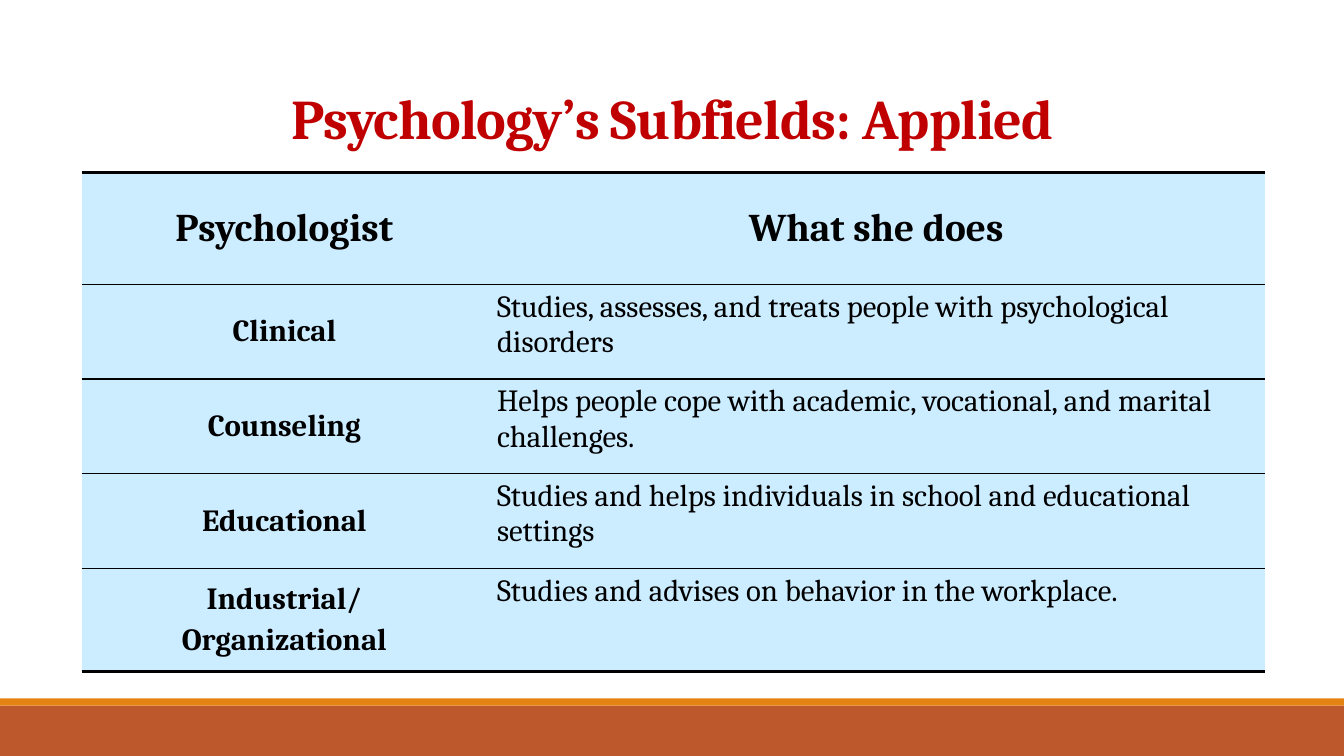
from lxml.etree import SubElement
from pptx import Presentation
from pptx.dml.color import RGBColor
from pptx.enum.shapes import MSO_SHAPE as Shape
from pptx.enum.text import MSO_ANCHOR as Anchor, PP_ALIGN as Align
from pptx.oxml.ns import qn
from pptx.util import Pt

PX = 9144  # 100 px to the inch
WIDE, HIGH = 1333, 750
FONT = "Cambria"
BLACK = RGBColor(0, 0, 0)
RED = RGBColor(0xC0, 0, 0)
SKY = RGBColor(0xCC, 0xEC, 0xFF)
RUST = RGBColor(0xBD, 0x58, 0x2C)
AMBER = RGBColor(0xE4, 0x83, 0x12)

COLS = [402, 772]
ROWS = [
    (111, "Psychologist", "What she does"),
    (94, "Clinical",
     "Studies, assesses, and treats people with psychological disorders"),
    (94, "Counseling",
     "Helps people cope with academic, vocational, and marital challenges."),
    (94, "Educational",
     "Studies and helps individuals in school and educational settings"),
    (102, "Industrial/\nOrganizational",
     "Studies and advises on behavior in the workplace."),
]


def px(*vals):
    return [round(val * PX) for val in vals]


def write(frame, text, size=22, color=BLACK, bold=False, align=Align.LEFT,
          anchor=Anchor.TOP, line=None, before=None, track=None):
    """Fill a frame; before is in percent of a line, track in 1/100 pt."""
    frame.word_wrap = True
    frame.vertical_anchor = anchor
    for i, part in enumerate(text.split("\n")):
        para = frame.add_paragraph() if i else frame.paragraphs[0]
        para.alignment = align
        if line:
            para.line_spacing = line
        if before:
            gap = SubElement(para._p.get_or_add_pPr(), qn("a:spcBef"))
            SubElement(gap, qn("a:spcPct"), val=str(before * 1000))
        run = para.add_run()
        run.text = part
        font = run.font
        font.name, font.size, font.bold = FONT, Pt(size), bold
        font.color.rgb = color
        if track:
            run._r.get_or_add_rPr().set("spc", str(track))


def edge(cell, top, bottom):
    """Rule a cell above and below, widths in points, with open sides."""
    props = cell._tc.get_or_add_tcPr()
    for side, width in (("L", 0), ("R", 0), ("T", top), ("B", bottom)):
        rule = SubElement(props, qn(f"a:ln{side}"), w=str(Pt(width)))
        if width:
            fill = SubElement(rule, qn("a:solidFill"))
            SubElement(fill, qn("a:srgbClr"), val=str(BLACK))
        else:
            SubElement(rule, qn("a:noFill"))


def footer(slide, x, y, w, h):
    trim = 7
    for top, tall, color in ((y + trim, h - trim, RUST), (y, trim, AMBER)):
        bar = slide.shapes.add_shape(Shape.RECTANGLE, *px(x, top, w, tall))
        bar.shadow.inherit = False
        bar.fill.solid()
        bar.fill.fore_color.rgb = color
        bar.line.fill.background()


def heading(slide, x, y, w, h):
    title = slide.shapes.title
    title.left, title.top, title.width, title.height = px(x, y, w, h)
    write(title.text_frame, "Psychology’s Subfields: Applied", size=40,
          color=RED, bold=True, align=Align.CENTER, anchor=Anchor.BOTTOM,
          line=0.85, track=-50)


def grid(slide, x, y):
    last = len(ROWS) - 1
    box = px(x, y, sum(COLS), sum(row[0] for row in ROWS))
    table = slide.shapes.add_table(len(ROWS), len(COLS), *box).table
    table.first_row = table.horz_banding = False
    for col, wide in zip(table.columns, px(*COLS)):
        col.width = wide
    for r, (tall, *texts) in enumerate(ROWS):
        table.rows[r].height = px(tall)[0]
        for c, text in enumerate(texts):
            cell = table.cell(r, c)
            edge(cell, 1 if r else 2.25, 2.25 if r == last else 1)
            cell.fill.solid()
            cell.fill.fore_color.rgb = SKY
            label = r == 0 or c == 0
            look = dict(bold=True, align=Align.CENTER, before=20) if label else {}
            write(cell.text_frame, text, size=22 if r else 28, **look)
            cell.vertical_anchor = Anchor.MIDDLE if label else Anchor.TOP


def main():
    deck = Presentation()
    deck.slide_width, deck.slide_height = px(WIDE, HIGH)
    slide = deck.slides.add_slide(deck.slide_layouts[5])
    footer(slide, 0, 693, WIDE, 57)
    heading(slide, 67, 30, 1200, 125)
    grid(slide, 81, 171)
    deck.save("out.pptx")


if __name__ == "__main__":
    main()
